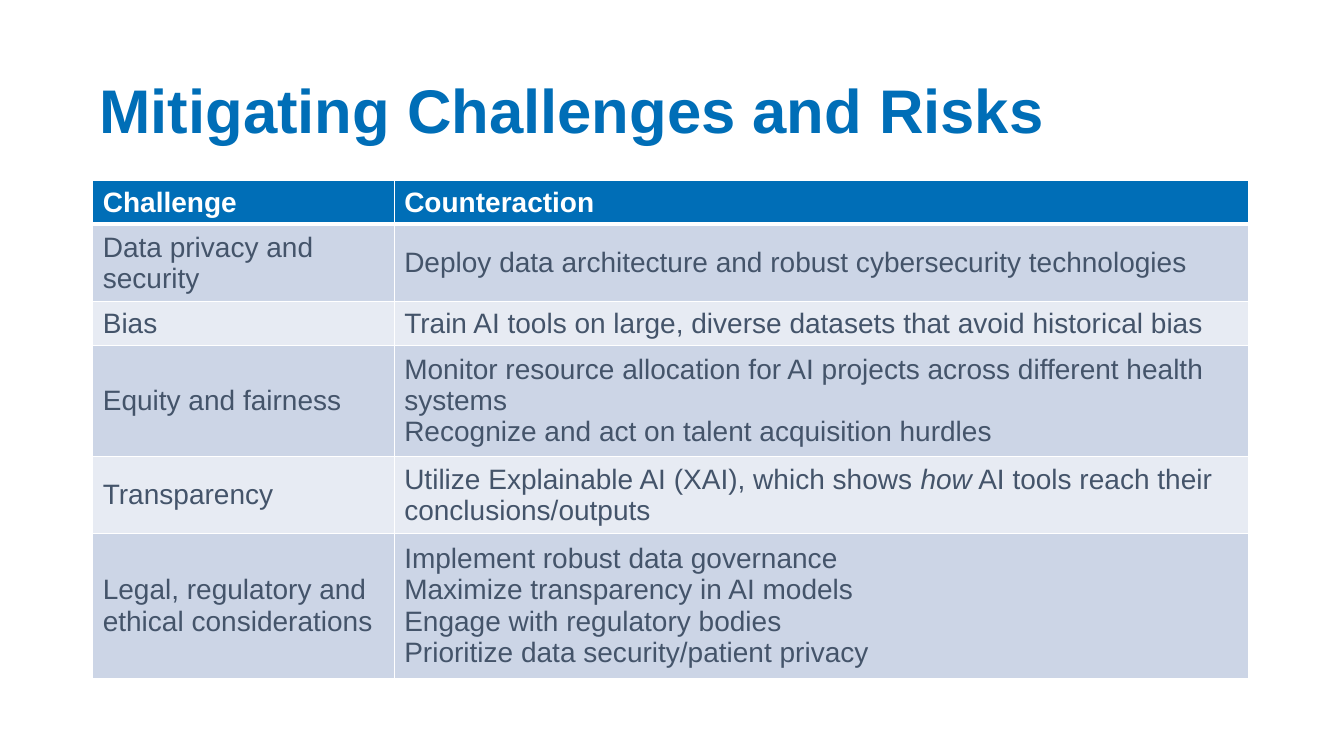
from dataclasses import dataclass

from lxml.etree import SubElement
from pptx import Presentation
from pptx.dml.color import RGBColor as Color
from pptx.enum.text import MSO_ANCHOR as Anchor
from pptx.oxml.ns import qn
from pptx.util import Inches, Pt


@dataclass(frozen=True)
class Theme:
    font: str = "Arial"
    title_size: int = 44
    table_size: int = 20
    accent: str = "006EB7"
    body: str = "44546A"
    white: str = "FFFFFF"
    bands: tuple = ("CCD5E6", "E7EBF3")
    border: int = 1
    header_border: int = 3


class SlideBuilder:
    """Draws styled elements on one slide, with lengths in percent of its size."""

    def __init__(self, presentation, theme):
        self.theme = theme
        self.width = presentation.slide_width
        self.height = presentation.slide_height
        self.slide = presentation.slides.add_slide(presentation.slide_layouts[6])

    def across(self, percent):
        return round(self.width * percent / 100)

    def down(self, percent):
        return round(self.height * percent / 100)

    def box(self, left, top, width, height):
        return self.across(left), self.down(top), self.across(width), self.down(height)

    def add_text(self, frame, paragraphs, color, **format_values):
        for index, runs in enumerate(paragraphs):
            paragraph = frame.add_paragraph() if index else frame.paragraphs[0]
            for text, italic in runs:
                run = paragraph.add_run()
                run.text = text
                values = {"name": self.theme.font, "italic": italic, **format_values}
                for name, value in values.items():
                    setattr(run.font, name, value)
                run.font.color.rgb = Color.from_string(color)

    def title(self, text, *place):
        frame = self.slide.shapes.add_textbox(*self.box(*place)).text_frame
        frame.word_wrap = True
        frame.vertical_anchor = Anchor.MIDDLE
        self.add_text(frame, [[(text, False)]], self.theme.accent,
                      size=Pt(self.theme.title_size), bold=True)
        frame.paragraphs[0].line_spacing = 0.9

    def borders(self, cell, widths):
        properties = cell._tc.get_or_add_tcPr()
        for side, width in widths.items():
            line = SubElement(properties, qn(f"a:ln{side}"), w=str(Pt(width)))
            fill = SubElement(line, qn("a:solidFill"))
            SubElement(fill, qn("a:srgbClr"), val=self.theme.white)

    def cell(self, cell, row, paragraphs):
        theme = self.theme
        header = row == 0
        self.borders(cell, {
            "L": theme.border,
            "R": theme.border,
            "T": theme.header_border if row == 1 else theme.border,
            "B": theme.header_border if header else theme.border,
        })
        cell.fill.solid()
        fill = theme.accent if header else theme.bands[(row - 1) % 2]
        cell.fill.fore_color.rgb = Color.from_string(fill)
        cell.vertical_anchor = Anchor.MIDDLE
        self.add_text(cell.text_frame, paragraphs, theme.white if header else theme.body,
                      size=Pt(theme.table_size), bold=header)

    def table(self, rows, left, top, column_widths, row_height):
        place = self.box(left, top, sum(column_widths), row_height * len(rows))
        table = self.slide.shapes.add_table(len(rows), len(column_widths), *place).table
        for column, width in zip(table.columns, column_widths):
            column.width = self.across(width)
        for row, (challenge, counteractions) in enumerate(rows):
            table.rows[row].height = self.down(row_height)
            self.cell(table.cell(row, 0), row, [[(challenge, False)]])
            self.cell(table.cell(row, 1), row, [
                [(item, False)] if isinstance(item, str) else item
                for item in counteractions
            ])


CHALLENGES = [
    ("Challenge", ["Counteraction"]),
    ("Data privacy and security",
     ["Deploy data architecture and robust cybersecurity technologies"]),
    ("Bias", ["Train AI tools on large, diverse datasets that avoid historical bias"]),
    ("Equity and fairness", [
        "Monitor resource allocation for AI projects across different health systems",
        "Recognize and act on talent acquisition hurdles",
    ]),
    ("Transparency", [[
        ("Utilize Explainable AI (XAI), which shows ", False),
        ("how", True),
        (" AI tools reach their conclusions/outputs", False),
    ]]),
    ("Legal, regulatory and ethical considerations", [
        "Implement robust data governance",
        "Maximize transparency in AI models",
        "Engage with regulatory bodies",
        "Prioritize data security/patient privacy",
    ]),
]


def main():
    presentation = Presentation()
    presentation.slide_width = Inches(13.33)
    presentation.slide_height = Inches(7.5)
    builder = SlideBuilder(presentation, Theme())
    builder.title("Mitigating Challenges and Risks", 6.67, 5.33, 86.27, 19.33)
    builder.table(CHALLENGES, 6.9, 23.87, (22.43, 63.54), 5.47)
    presentation.save("out.pptx")


if __name__ == "__main__":
    main()
